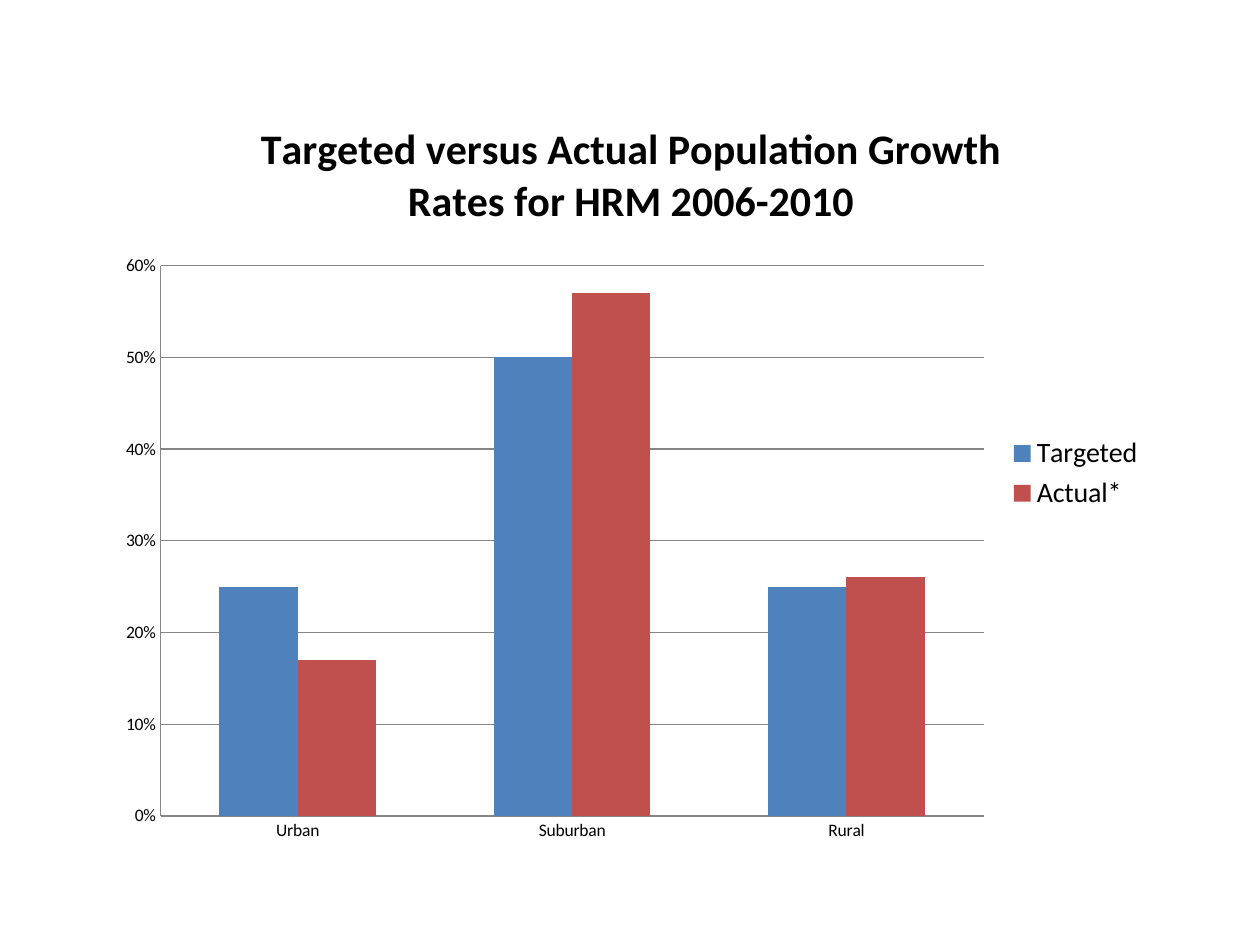
from pptx import Presentation
from pptx import util as u
from pptx.chart.data import CategoryChartData
from pptx.dml.color import RGBColor
from pptx.enum import chart as c

PX = 914400 / 126
FONT = "Calibri"
COLORS = {"text": "000000", "line": "868686", "Targeted": "4F81BD", "Actual*": "C0504D"}
TITLE = "Targeted versus Actual Population Growth Rates for HRM 2006-2010"
REGIONS = ["Urban", "Suburban", "Rural"]
RATES = {"Targeted": [0.25, 0.50, 0.25], "Actual*": [0.17, 0.57, 0.26]}


def px(length):
    return u.Emu(round(length * PX))


def color(name):
    return RGBColor.from_string(COLORS[name])


def style_font(font, size, bold=False):
    font.name, font.size, font.bold = FONT, u.Pt(size), bold
    font.color.rgb = color("text")


def style_line(line):
    line.color.rgb = color("line")
    line.width = u.Pt(0.75)


def add_growth_chart(page, left, top, width, height):
    data = CategoryChartData(number_format="0%")
    data.categories = REGIONS
    for name, values in RATES.items():
        data.add_series(name, values)
    chart = page.shapes.add_chart(
        c.XL_CHART_TYPE.COLUMN_CLUSTERED,
        px(left), px(top), px(width), px(height), data).chart
    style_font(chart.font, 10)

    # Title
    frame = chart.chart_title.text_frame
    frame.text = TITLE
    style_font(frame.paragraphs[0].font, 24, bold=True)
    chart.chart_title.include_in_layout = False

    # Legend
    chart.has_legend = True
    chart.legend.position = c.XL_LEGEND_POSITION.RIGHT
    chart.legend.include_in_layout = False
    style_font(chart.legend.font, 16)

    # Axes
    for axis in (chart.category_axis, chart.value_axis):
        axis.major_tick_mark = axis.minor_tick_mark = c.XL_TICK_MARK.NONE
        style_line(axis.format.line)
        style_font(axis.tick_labels.font, 10)
    rates = chart.value_axis
    rates.minimum_scale, rates.maximum_scale, rates.major_unit = 0, 0.6, 0.1
    rates.tick_labels.number_format = "0%"
    rates.tick_labels.number_format_is_linked = False
    rates.has_major_gridlines = True
    style_line(rates.major_gridlines.format.line)

    # Columns
    plot = chart.plots[0]
    plot.gap_width, plot.overlap = 150, 0
    plot.vary_by_categories = False
    for series in plot.series:
        series.format.fill.solid()
        series.format.fill.fore_color.rgb = color(series.name)


def main():
    deck = Presentation()
    deck.slide_width, deck.slide_height = px(1260), px(945)
    page = deck.slides.add_slide(deck.slide_layouts[6])
    add_growth_chart(page, 105, 91, 1052, 765)
    deck.save("out.pptx")


if __name__ == "__main__":
    main()
